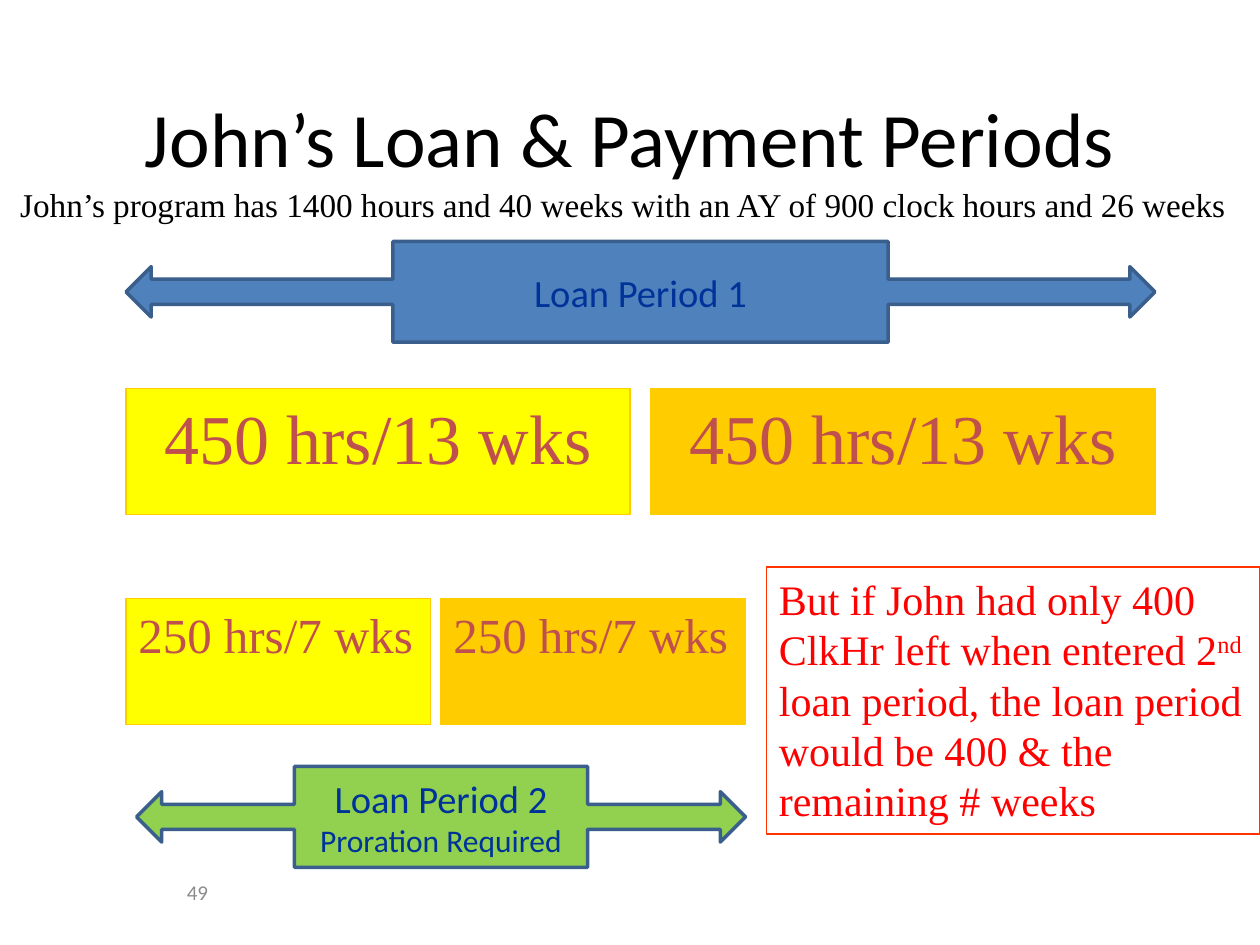
from dataclasses import dataclass, field
from typing import Optional

from pptx import Presentation
from pptx.dml.color import RGBColor
from pptx.enum.shapes import MSO_SHAPE
from pptx.enum.text import MSO_ANCHOR, PP_ALIGN
from pptx.util import Pt

RECT = MSO_SHAPE.RECTANGLE
ARROW = MSO_SHAPE.LEFT_RIGHT_ARROW_CALLOUT
TOP, MID = MSO_ANCHOR.TOP, MSO_ANCHOR.MIDDLE
LEFT, MIDDLE, RIGHT = PP_ALIGN.LEFT, PP_ALIGN.CENTER, PP_ALIGN.RIGHT

BLACK = RGBColor(0x00, 0x00, 0x00)
GRAY = RGBColor(0x8C, 0x8C, 0x8C)
YELLOW = RGBColor(0xFF, 0xFF, 0x00)
GOLD = RGBColor(0xFF, 0xCC, 0x00)
BRICK = RGBColor(0xC0, 0x50, 0x4D)
BLUE = RGBColor(0x4F, 0x81, 0xBD)
STEEL = RGBColor(0x3A, 0x5F, 0x8C)
GREEN = RGBColor(0x92, 0xD0, 0x50)
NAVY = RGBColor(0x00, 0x33, 0x99)
RED = RGBColor(0xFF, 0x00, 0x00)
FLAME = RGBColor(0xFF, 0x33, 0x00)

SANS, SERIF = "Calibri", "Times New Roman"


@dataclass
class Run:
    text: str
    size: float
    color: RGBColor
    font: str = SERIF
    raised: bool = False


@dataclass
class Box:
    left: float
    top: float
    width: float
    height: float
    lines: list[list[Run]]
    align: PP_ALIGN = MIDDLE
    format: dict = field(default_factory=dict)
    kind: Optional[MSO_SHAPE] = None
    fill: Optional[RGBColor] = None
    line: Optional[RGBColor] = None
    weight: float = 1


def write(frame, box: Box) -> None:
    values = {"word_wrap": True, "vertical_anchor": TOP} | box.format
    for name, value in values.items():
        setattr(frame, name, value)
    for index, runs in enumerate(box.lines):
        para = frame.add_paragraph() if index else frame.paragraphs[0]
        para.alignment = box.align
        for item in runs:
            run = para.add_run()
            run.text = item.text
            for name, value in {"size": Pt(item.size), "name": item.font}.items():
                setattr(run.font, name, value)
            run.font.color.rgb = item.color
            if item.raised:
                run.font._element.set("baseline", "30000")


def draw(slide, box: Box) -> None:
    area = [Pt(n) for n in (box.left, box.top, box.width, box.height)]
    if box.kind is None:
        shape = slide.shapes.add_textbox(*area)
    else:
        shape = slide.shapes.add_shape(box.kind, *area)
        shape.shadow.inherit = False
        if box.fill is None:
            shape.fill.background()
        else:
            shape.fill.solid()
            shape.fill.fore_color.rgb = box.fill
        shape.line.color.rgb = box.line
        shape.line.width = Pt(box.weight)
    write(shape.text_frame, box)


def pair(slide, top: float, width: float, gap: float, label: Run,
         align: PP_ALIGN) -> None:
    """Draw the two payment periods of one loan period."""
    for index, fill in enumerate((YELLOW, GOLD)):
        draw(slide, Box(72 + index * (width + gap), top, width, 72, [[label]],
                        align, kind=RECT, fill=fill, line=GOLD))


def main() -> None:
    deck = Presentation()
    deck.slide_width, deck.slide_height = Pt(720), Pt(540)
    slide = deck.slides.add_slide(deck.slide_layouts[6])

    # Title and page number
    draw(slide, Box(24, 48, 672, 36, [
        [Run("John’s Loan & Payment Periods", 44, BLACK, SANS)]]))
    draw(slide, Box(54, 492, 72, 36, [[Run("49", 12, GRAY, SANS)]], RIGHT,
                    {"vertical_anchor": MID}))

    # Payment periods
    pair(slide, 222, 288, 12, Run("450 hrs/13 wks", 40, BRICK), MIDDLE)
    pair(slide, 342, 174, 6, Run("250 hrs/7 wks", 28, BRICK), LEFT)

    # Loan periods
    first = [[Run("Loan Period 1", 22, NAVY, SANS)]]
    second = [[Run("Loan Period 2", 22, NAVY, SANS)],
              [Run("Proration Required", 18, NAVY, SANS)]]
    for left, top, width, fill, lines in (
            (72, 138, 588, BLUE, first), (78, 438, 348, GREEN, second)):
        draw(slide, Box(left, top, width, 57.6, lines, MIDDLE,
                        {"vertical_anchor": MID}, ARROW, fill, STEEL, 2))

    # Remark on the second loan period
    draw(slide, Box(438, 324, 282, 152.6, [
        [Run("But if John had only 400 ClkHr left when entered 2", 24, RED),
         Run("nd", 24, RED, raised=True),
         Run(" loan period, the loan period", 24, RED)],
        [Run("would be 400 & the remaining # weeks", 24, RED)],
    ], LEFT, kind=RECT, line=FLAME, weight=0.75))

    # Program summary
    draw(slide, Box(4.5, 102, 704, 30, [[
        Run("John’s program has 1400 hours and 40 weeks with an AY of "
            "900 clock hours and 26 weeks", 19, BLACK)]], LEFT,
        {"word_wrap": False}))

    deck.save("out.pptx")


if __name__ == "__main__":
    main()
